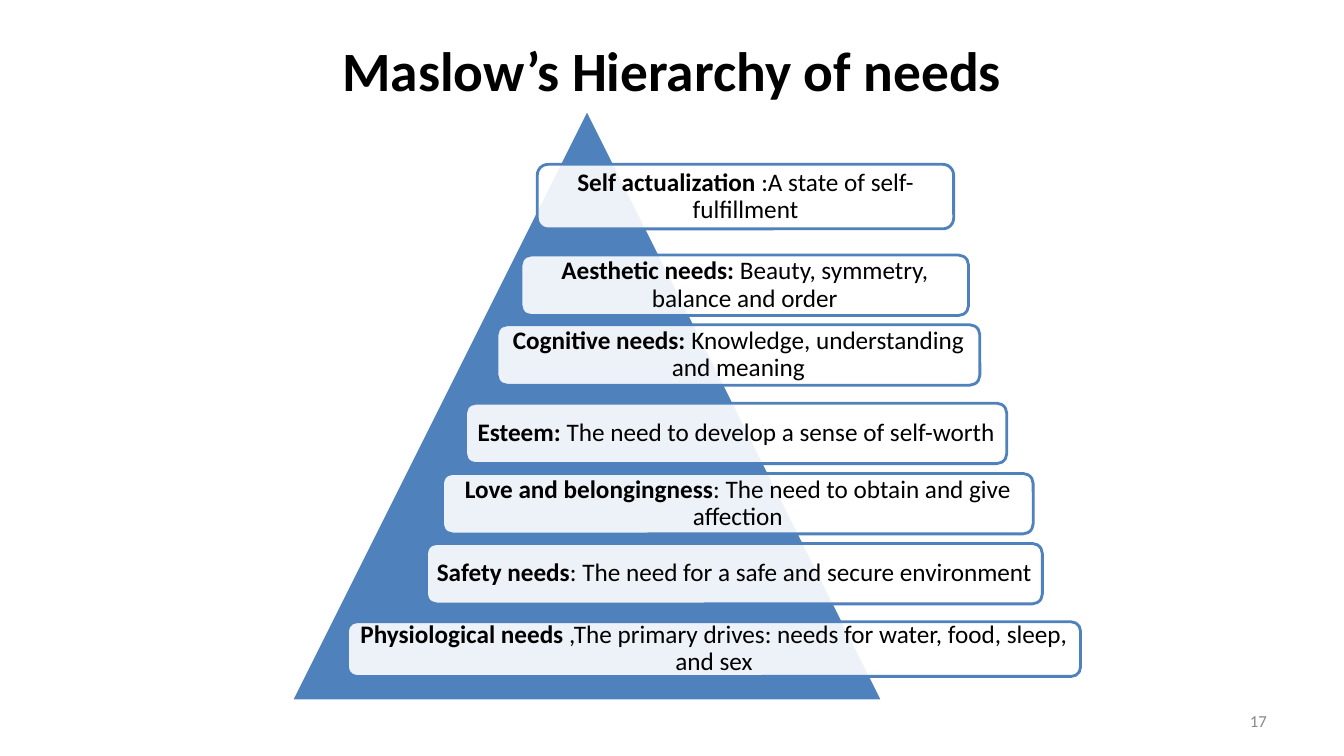
from lxml import etree
from pptx import Presentation
from pptx.dml.color import RGBColor
from pptx.enum.shapes import MSO_SHAPE as Shape
from pptx.enum.text import MSO_ANCHOR as Anchor, MSO_AUTO_SIZE as AutoSize, PP_ALIGN as Align
from pptx.oxml.ns import qn
from pptx.util import Pt

BLUE = RGBColor(0x4F, 0x81, 0xBD)
WHITE = RGBColor(0xFF, 0xFF, 0xFF)
BLACK = RGBColor(0x00, 0x00, 0x00)
GRAY = RGBColor(0x89, 0x89, 0x89)


def style_text(paragraph, size, color, align):
    paragraph.alignment = align
    font = paragraph.font
    font.name, font.size, font.color.rgb = "Calibri", Pt(size), color


def add_outlined(kind, left, top, width, height, fill, line):
    shape = slide.shapes.add_shape(kind, Pt(left), Pt(top), Pt(width), Pt(height))
    shape.shadow.inherit = False
    shape.fill.solid()
    shape.fill.fore_color.rgb = fill
    shape.line.color.rgb = line
    shape.line.width = Pt(2)
    return shape


presentation = Presentation()
presentation.slide_width, presentation.slide_height = Pt(960), Pt(540)
slide = presentation.slides.add_slide(presentation.slide_layouts[5])

# Title
title = slide.shapes.title
title.left, title.top, title.width, title.height = Pt(156), Pt(21.6), Pt(648), Pt(56.2)
title.text_frame.text = "Maslow’s Hierarchy of needs"
title.text_frame.auto_size = AutoSize.NONE
title.text_frame.vertical_anchor = Anchor.MIDDLE
style_text(title.text_frame.paragraphs[0], 39.6, BLACK, Align.CENTER)
title.text_frame.paragraphs[0].font.bold = True

# Pyramid
add_outlined(Shape.ISOSCELES_TRIANGLE, 208, 78, 422.6, 422.6, BLUE, WHITE)

# Needs, from top to base: left, top, width, height, name, description
needs = [
    (383.8, 117.4, 297.4, 46.1, "Self actualization ", ":A state of self-fulfillment"),
    (372.2, 182.2, 319.7, 43.2, "Aesthetic needs: ", "Beauty, symmetry, balance and order"),
    (355, 232, 344.9, 43.2, "Cognitive needs: ", "Knowledge, understanding and meaning"),
    (332.6, 288, 386.6, 43.2, "Esteem: ", "The need to develop a sense of self-worth"),
    (316, 338.2, 422, 43.2, "Love and belongingness", ": The need to obtain and give affection"),
    (304.6, 388.2, 440, 43.2, "Safety needs", ": The need for a safe and secure environment"),
    (248.2, 444.2, 523.6, 39, "Physiological needs ",
     ",The primary drives: needs for water, food, sleep, and sex"),
]
for left, top, width, height, name, description in needs:
    box = add_outlined(Shape.ROUNDED_RECTANGLE, left, top, width, height, WHITE, BLUE)
    fill_color = box.fill._xPr.find(qn("a:solidFill"))[0]
    etree.SubElement(fill_color, qn("a:alpha"), val="90000")
    frame = box.text_frame
    frame.word_wrap = True
    frame.vertical_anchor = Anchor.MIDDLE
    frame.margin_left = frame.margin_right = frame.margin_top = frame.margin_bottom = Pt(5)
    paragraph = frame.paragraphs[0]
    style_text(paragraph, 18, BLACK, Align.CENTER)
    paragraph.line_spacing = 0.9
    for text, bold in ((name, True), (description, False)):
        run = paragraph.add_run()
        run.text = text
        run.font.bold = bold

# Slide number
number = slide.shapes.add_textbox(Pt(688), Pt(500.4), Pt(224), Pt(28.8))
number.text_frame.word_wrap = True
number.text_frame.vertical_anchor = Anchor.MIDDLE
number.text_frame.text = "17"
style_text(number.text_frame.paragraphs[0], 12, GRAY, Align.RIGHT)

presentation.save("out.pptx")
